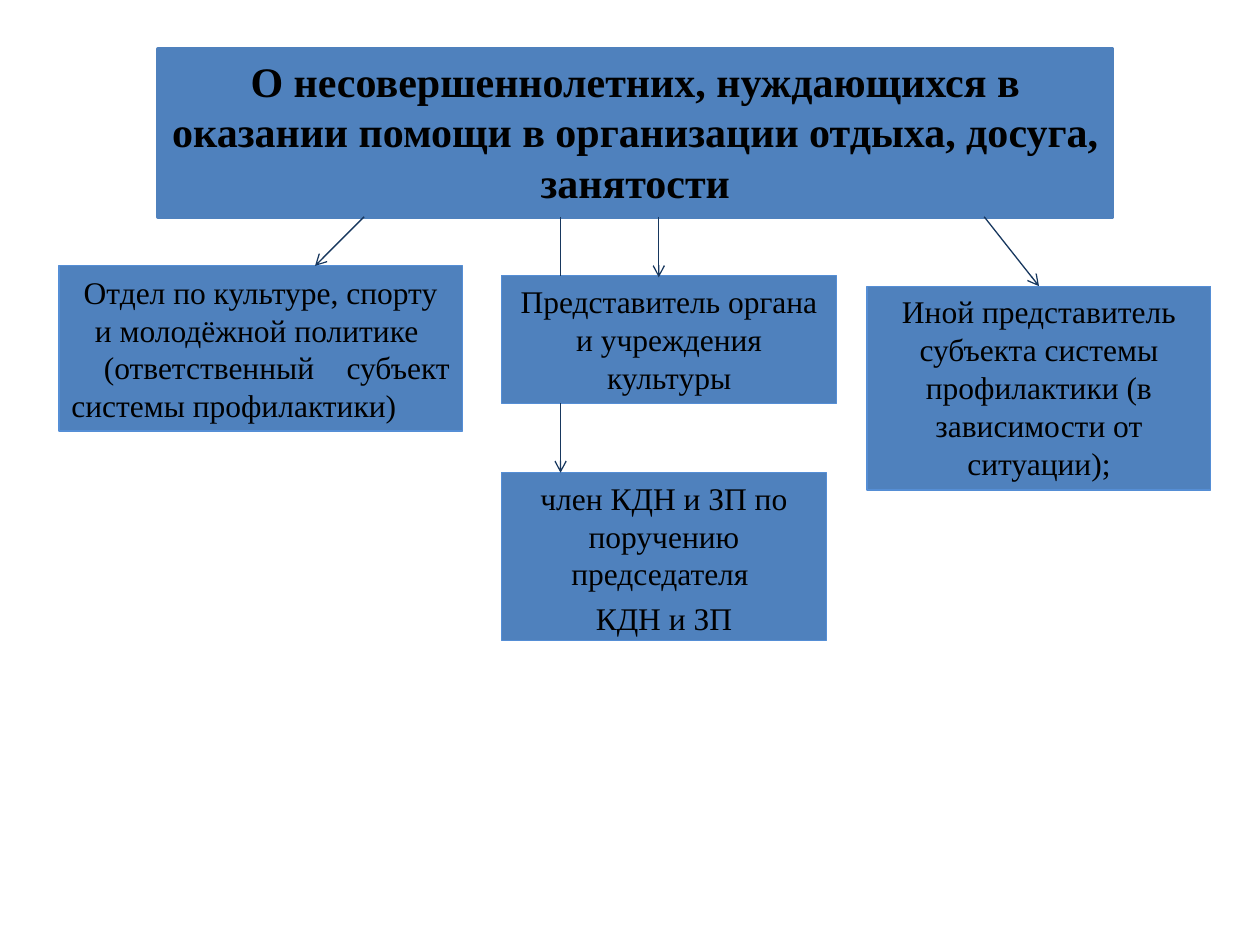
"""Build a slide on who organises leisure and employment for minors in need."""
from lxml.etree import SubElement
from pptx import Presentation
from pptx.dml.color import RGBColor
from pptx.enum.shapes import MSO_CONNECTOR as Connector, MSO_SHAPE as Shape
from pptx.enum.text import MSO_ANCHOR as Anchor, MSO_AUTO_SIZE as AutoSize, PP_ALIGN as Align
from pptx.oxml.ns import qn
from pptx.util import Cm, Pt


def color(value):
    """Turn a hex string into a colour."""
    return RGBColor.from_string(value)


def style_box(box, paragraphs, size, border, border_width, bold=False):
    """Fill and outline a box and set its centred text."""
    box.fill.solid()
    box.fill.fore_color.rgb = color("4F81BD")
    box.line.color.rgb = color(border)
    box.line.width = Pt(border_width)
    frame = box.text_frame
    frame.word_wrap = True
    frame.vertical_anchor = Anchor.TOP
    frame.text = "\n".join(paragraphs)
    for para in frame.paragraphs:
        para.alignment = Align.CENTER
        for span in para.runs:
            span.font.name = "Times New Roman"
            span.font.size = Pt(size)
            span.font.bold = bold
            span.font.color.rgb = color("000000")


deck = Presentation()
deck.slide_width, deck.slide_height = Cm(25.4), Cm(19.05)
slide = deck.slides.add_slide(deck.slide_layouts[5])

title = slide.shapes.title
title.left, title.top, title.width, title.height = Cm(3.18), Cm(0.99), Cm(19.25), Cm(3.38)
style_box(title, ["О несовершеннолетних, нуждающихся в оказании помощи "
                  "в организации отдыха, досуга, занятости"], 24, "4F81BD", 2, bold=True)
title.text_frame.auto_size = AutoSize.SHAPE_TO_FIT_TEXT

participants = [
    (1.19, 5.36, 8.13, 3.33, ["Отдел по культуре, спорту и молодёжной политике ",
                              " (ответственный субъект системы профилактики)"]),
    (10.11, 5.56, 6.76, 2.57, ["Представитель органа и учреждения культуры"]),
    (17.48, 5.77, 6.93, 4.11, ["Иной представитель субъекта системы профилактики "
                               "(в зависимости от ситуации);"]),
    (10.11, 9.53, 6.55, 3.38, ["член КДН и ЗП по поручению председателя ", "КДН и ЗП"]),
]
boxes = []
for left, top, width, height, paragraphs in participants:
    box = slide.shapes.add_shape(Shape.RECTANGLE, Cm(left), Cm(top), Cm(width), Cm(height))
    box.shadow.inherit = False
    style_box(box, paragraphs, 18, "558ED5", 0.75)
    boxes.append(box)

department, culture, other, member = boxes
department.text_frame.vertical_anchor = Anchor.MIDDLE
department.text_frame.paragraphs[1].alignment = Align.JUSTIFY
for box in (department, culture, other):
    box.text_frame.auto_size = AutoSize.SHAPE_TO_FIT_TEXT
for para in member.text_frame.paragraphs:
    para.space_before = Pt(3.6)

links = [
    (7.34, 4.37, 6.35, 5.36, True, None),
    (13.28, 4.37, 13.28, 5.59, True, None),
    (19.84, 4.37, 20.94, 5.77, True, other),
    (11.3, 4.37, 11.3, 5.56, False, None),
    (11.3, 8.13, 11.3, 9.53, True, None),
]
for x1, y1, x2, y2, has_arrow, target in links:
    link = slide.shapes.add_connector(Connector.STRAIGHT, Cm(x1), Cm(y1), Cm(x2), Cm(y2))
    link.line.color.rgb = color("17375E")
    link.line.width = Pt(0.75)
    if has_arrow:
        SubElement(link.line._get_or_add_ln(), qn("a:tailEnd"), type="arrow")
    SubElement(link._element.spPr, qn("a:effectLst"))
    if target:
        link.end_connect(target, 0)

deck.save("out.pptx")
